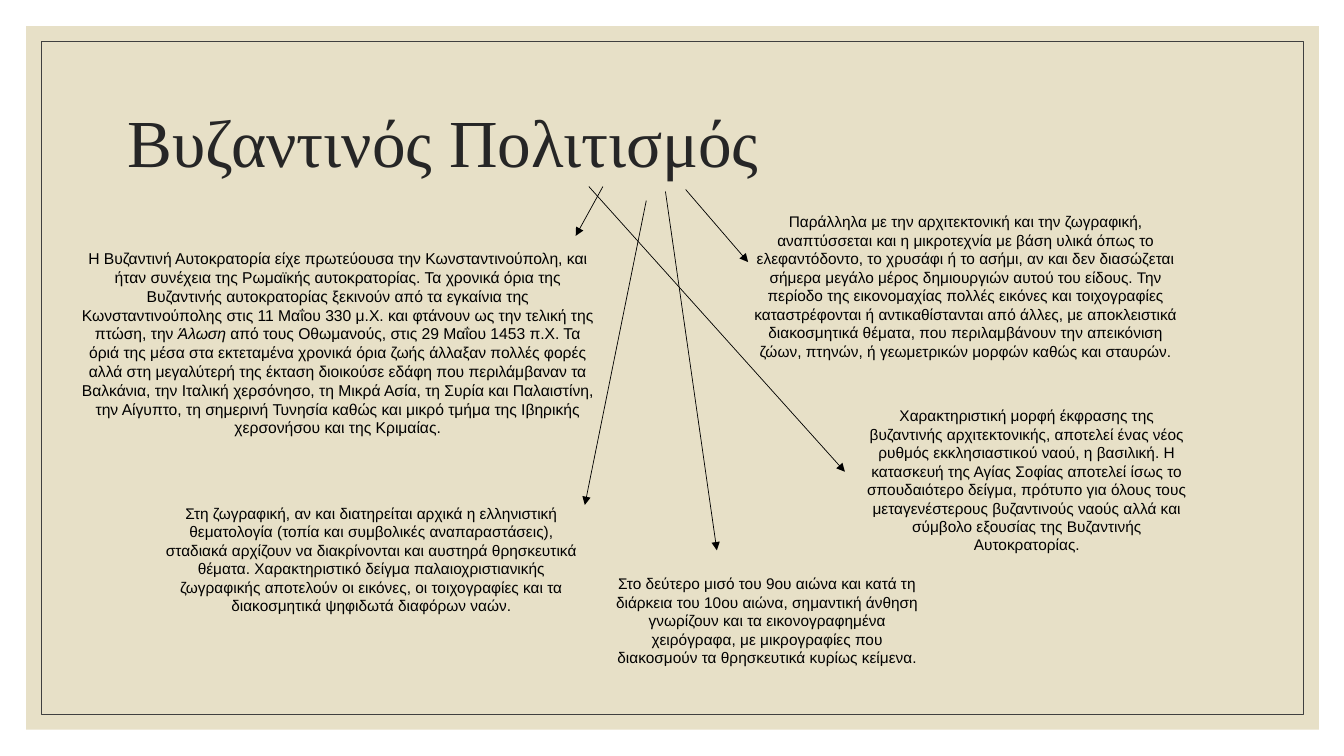
from dataclasses import dataclass

from lxml.etree import SubElement
from pptx import Presentation
from pptx.dml.color import RGBColor
from pptx.enum.shapes import MSO_CONNECTOR, MSO_SHAPE
from pptx.enum.text import MSO_ANCHOR, PP_ALIGN
from pptx.oxml.ns import qn
from pptx.slide import Slide
from pptx.util import Inches, Pt


@dataclass(frozen=True)
class Theme:
    """Colours, fonts and type sizes of the slide."""

    parchment: RGBColor = RGBColor(0xE7, 0xE0, 0xC7)
    border: RGBColor = RGBColor(0x40, 0x40, 0x40)
    heading: RGBColor = RGBColor(0x26, 0x26, 0x26)
    ink: RGBColor = RGBColor(0, 0, 0)
    heading_font: str = "Times New Roman"
    body_font: str = "Arial"
    heading_size: float = 48
    history_size: float = 11.2
    body_size: float = 11
    hairline: float = 0.5


@dataclass(frozen=True)
class Box:
    """A rectangle in inches."""

    left: float
    top: float
    width: float
    height: float

    def lengths(self) -> list[Inches]:
        """Return left, top, width and height as lengths."""
        return [Inches(side) for side in (self.left, self.top, self.width, self.height)]


@dataclass(frozen=True)
class Passage:
    """A block of text whose every second run is italic."""

    box: Box
    runs: tuple[str, ...]
    font: str
    size: float
    color: RGBColor
    align: PP_ALIGN = PP_ALIGN.CENTER
    anchor: MSO_ANCHOR = MSO_ANCHOR.TOP
    line_spacing: float = 1.0


@dataclass(frozen=True)
class Arrow:
    """An arrow from the title to a passage, in inches."""

    start: tuple[float, float]
    end: tuple[float, float]


THEME = Theme()
BACKDROP = Box(0.26, 0.26, 12.82, 6.98)
FRAME = Box(0.41, 0.41, 12.52, 6.68)

TITLE = Passage(
    Box(1.17, 0.7, 11, 1.5),
    ("Βυζαντινός Πολιτισμός",),
    THEME.heading_font,
    THEME.heading_size,
    THEME.heading,
    PP_ALIGN.LEFT,
    MSO_ANCHOR.MIDDLE,
    0.9,
)


def body_passage(box: Box, *runs: str, size: float = THEME.body_size) -> Passage:
    """Return a passage in the body style."""
    return Passage(box, runs, THEME.body_font, size, THEME.ink)


PASSAGES = (
    TITLE,
    body_passage(
        Box(0.71, 2.42, 5.28, 2.05),
        "Η Βυζαντινή Αυτοκρατορία είχε πρωτεύουσα την Κωνσταντινούπολη, και ήταν "
        "συνέχεια της Ρωμαϊκής αυτοκρατορίας. Τα χρονικά όρια της Βυζαντινής "
        "αυτοκρατορίας ξεκινούν από τα εγκαίνια της Κωνσταντινούπολης στις 11 Μαΐου "
        "330 μ.Χ. και φτάνουν ως την τελική της πτώση, την ",
        "Άλωση",
        " από τους Οθωμανούς, στις 29 Μαΐου 1453 π.Χ. Τα όριά της μέσα στα εκτεταμένα "
        "χρονικά όρια ζωής άλλαξαν πολλές φορές αλλά στη μεγαλύτερή της έκταση "
        "διοικούσε εδάφη που περιλάμβαναν τα Βαλκάνια, την Ιταλική χερσόνησο, "
        "τη Μικρά Ασία, τη Συρία και Παλαιστίνη, την Αίγυπτο, τη σημερινή Τυνησία "
        "καθώς και μικρό τμήμα της Ιβηρικής χερσονήσου και της Κριμαίας.",
        size=THEME.history_size,
    ),
    body_passage(
        Box(8.5, 3.98, 3.37, 1.58),
        "Χαρακτηριστική μορφή έκφρασης της βυζαντινής αρχιτεκτονικής, αποτελεί ένας "
        "νέος ρυθμός εκκλησιαστικού ναού, η βασιλική. Η κατασκευή της Αγίας Σοφίας "
        "αποτελεί ίσως το σπουδαιότερο δείγμα, πρότυπο για όλους τους μεταγενέστερους "
        "βυζαντινούς ναούς αλλά και σύμβολο εξουσίας της Βυζαντινής Αυτοκρατορίας.",
    ),
    body_passage(
        Box(7.35, 2.06, 4.46, 1.58),
        "Παράλληλα με την αρχιτεκτονική και την ζωγραφική, αναπτύσσεται και η "
        "μικροτεχνία με βάση υλικά όπως το ελεφαντόδοντο, το χρυσάφι ή το ασήμι, αν "
        "και δεν διασώζεται σήμερα μεγάλο μέρος δημιουργιών αυτού του είδους. Την "
        "περίοδο της εικονομαχίας πολλές εικόνες και τοιχογραφίες καταστρέφονται ή "
        "αντικαθίστανται από άλλες, με αποκλειστικά διακοσμητικά θέματα, που "
        "περιλαμβάνουν την απεικόνιση ζώων, πτηνών, ή γεωμετρικών μορφών καθώς "
        "και σταυρών.",
    ),
    body_passage(
        Box(1.47, 4.95, 4.43, 1.21),
        "Στη ζωγραφική, αν και διατηρείται αρχικά η ελληνιστική θεματολογία (τοπία "
        "και συμβολικές αναπαραστάσεις), σταδιακά αρχίζουν να διακρίνονται και "
        "αυστηρά θρησκευτικά θέματα. Χαρακτηριστικό δείγμα παλαιοχριστιανικής "
        "ζωγραφικής αποτελούν οι εικόνες, οι τοιχογραφίες και τα διακοσμητικά "
        "ψηφιδωτά διαφόρων ναών.",
    ),
    body_passage(
        Box(5.98, 5.65, 3.26, 1.03),
        "Στο δεύτερο μισό του 9ου αιώνα και κατά τη διάρκεια του 10ου αιώνα, "
        "σημαντική άνθηση γνωρίζουν και τα εικονογραφημένα χειρόγραφα, με "
        "μικρογραφίες που διακοσμούν τα θρησκευτικά κυρίως κείμενα.",
    ),
)

ARROWS = (
    Arrow((5.98, 1.85), (5.71, 2.34)),
    Arrow((6.8, 1.88), (7.42, 2.6)),
    Arrow((6.41, 1.99), (5.8, 5.01)),
    Arrow((6.6, 1.9), (7.11, 5.46)),
    Arrow((5.84, 1.85), (8.38, 4.68)),
)


def draw_background(slide: Slide) -> None:
    """Draw the parchment panel and the thin frame inside it."""
    panel, frame = (
        slide.shapes.add_shape(MSO_SHAPE.RECTANGLE, *box.lengths())
        for box in (BACKDROP, FRAME)
    )
    panel.shadow.inherit = frame.shadow.inherit = False
    panel.fill.solid()
    panel.fill.fore_color.rgb = THEME.parchment
    panel.line.fill.background()
    frame.fill.background()
    frame.line.color.rgb = THEME.border
    frame.line.width = Pt(THEME.hairline)


def draw_passage(slide: Slide, passage: Passage) -> None:
    """Draw one wrapped block of text."""
    frame = slide.shapes.add_textbox(*passage.box.lengths()).text_frame
    frame.word_wrap = True
    frame.vertical_anchor = passage.anchor
    paragraph = frame.paragraphs[0]
    paragraph.alignment = passage.align
    paragraph.line_spacing = passage.line_spacing
    paragraph.font.name = passage.font
    paragraph.font.size = Pt(passage.size)
    paragraph.font.color.rgb = passage.color
    for position, words in enumerate(passage.runs):
        run = paragraph.add_run()
        run.text = words
        if position % 2:
            run.font.italic = True


def draw_arrow(slide: Slide, arrow: Arrow) -> None:
    """Draw a thin line with a triangle at its end."""
    ends = [Inches(value) for value in (*arrow.start, *arrow.end)]
    connector = slide.shapes.add_connector(MSO_CONNECTOR.STRAIGHT, *ends)
    connector.line.color.rgb = THEME.ink
    connector.line.width = Pt(THEME.hairline)
    SubElement(connector.line._get_or_add_ln(), qn("a:tailEnd"), type="triangle")
    SubElement(connector._element.spPr, qn("a:effectLst"))


def main() -> None:
    """Build the slide and save it."""
    presentation = Presentation()
    presentation.slide_width = Inches(13.33)
    presentation.slide_height = Inches(7.5)
    slide = presentation.slides.add_slide(presentation.slide_layouts[6])
    draw_background(slide)
    for passage in PASSAGES:
        draw_passage(slide, passage)
    for arrow in ARROWS:
        draw_arrow(slide, arrow)
    presentation.save("out.pptx")


if __name__ == "__main__":
    main()
